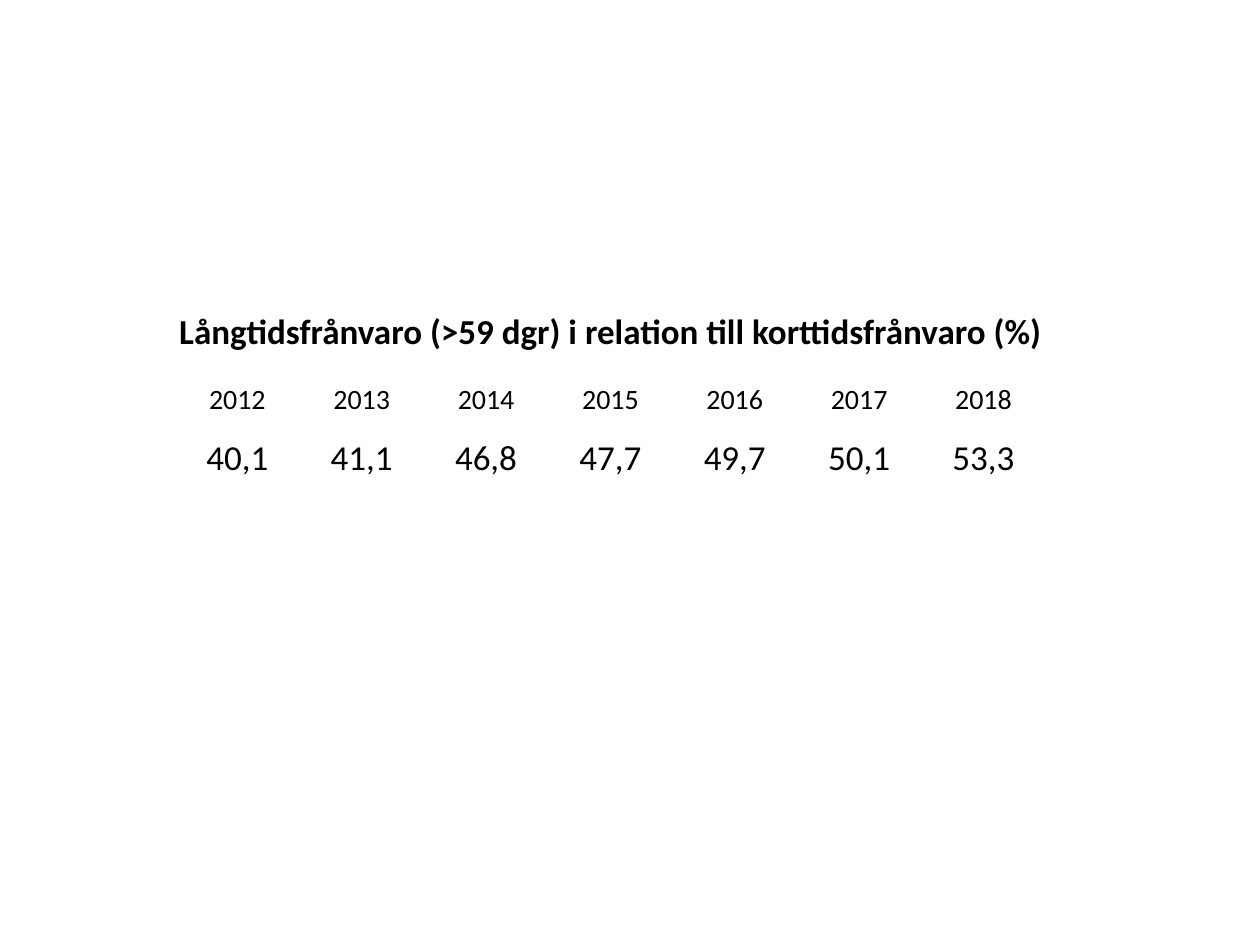
from pptx import Presentation
from pptx.dml.color import RGBColor
from pptx.enum import text
from pptx.util import Inches, Pt

TITLE = "Långtidsfrånvaro (>59 dgr) i relation till korttidsfrånvaro (%)"
YEARS = ["2012", "2013", "2014", "2015", "2016", "2017", "2018"]
RATES = ["40,1", "41,1", "46,8", "47,7", "49,7", "50,1", "53,3"]
ROWS = [
    ([TITLE], 0.63, 20, True),
    (YEARS, 0.5, 16, False),
    (RATES, 0.5, 20, False),
]
LEFT, TOP, WIDTH = 1.39, 2.18, 6.91
BLACK = RGBColor(0, 0, 0)


def write(cell, words, size=20, bold=False):
    cell.vertical_anchor = text.MSO_ANCHOR.BOTTOM
    cell.margin_left = cell.margin_right = cell.margin_top = Inches(0.01)
    cell.margin_bottom = 0
    para = cell.text_frame.paragraphs[0]
    para.alignment = text.PP_ALIGN.CENTER
    run = para.add_run()
    run.text = words
    font = run.font
    font.name, font.size, font.bold = "Calibri", Pt(size), bold
    font.color.rgb = BLACK


def main():
    deck = Presentation()
    deck.slide_width, deck.slide_height = Inches(10), Inches(7.5)
    slide = deck.slides.add_slide(deck.slide_layouts[6])
    high = sum(row[1] for row in ROWS)
    table = slide.shapes.add_table(
        len(ROWS), len(YEARS), Inches(LEFT), Inches(TOP), Inches(WIDTH), Inches(high)
    ).table
    table.first_row = table.horz_banding = False
    for col in table.columns:
        col.width = Inches(WIDTH / len(YEARS))
    for cell in table.iter_cells():
        cell.fill.background()
    table.cell(0, 0).merge(table.cell(0, len(YEARS) - 1))
    for r, (words, tall, size, bold) in enumerate(ROWS):
        table.rows[r].height = Inches(tall)
        for c, word in enumerate(words):
            write(table.cell(r, c), word, size=size, bold=bold)
    deck.save("out.pptx")


if __name__ == "__main__":
    main()
